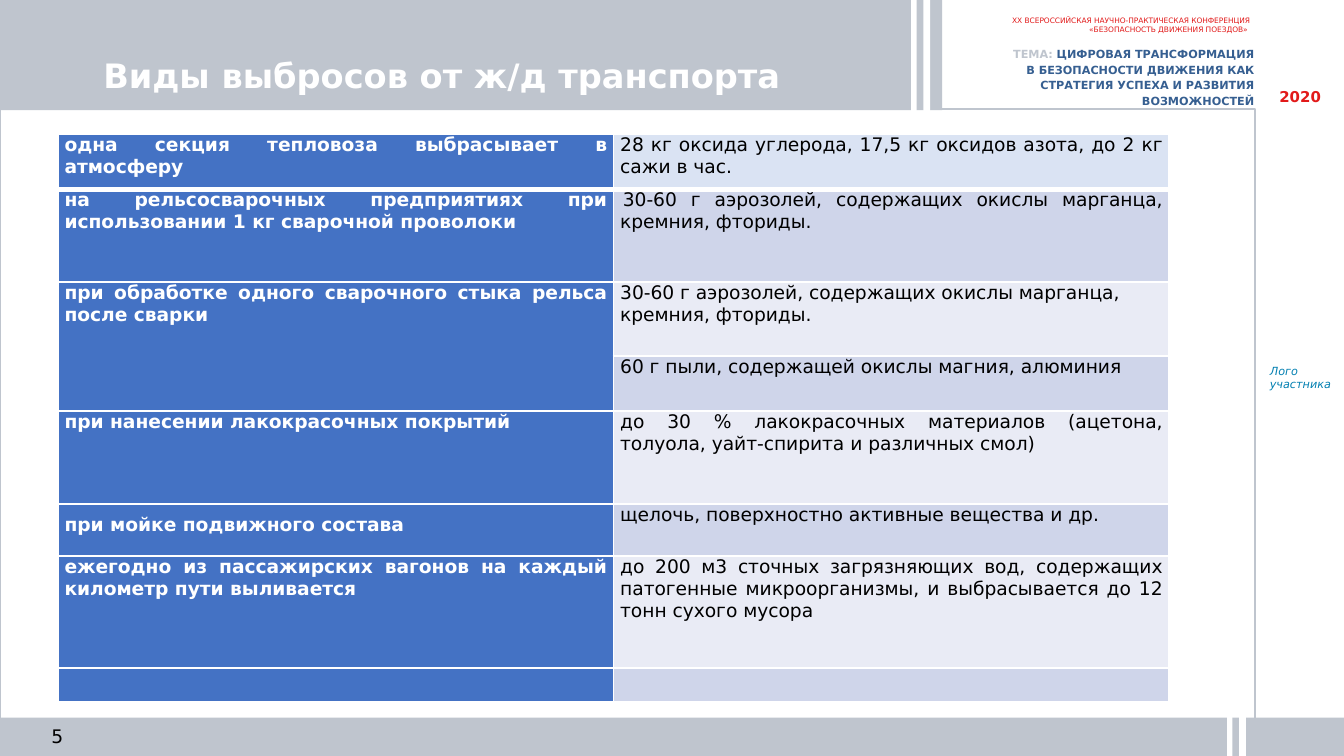
from lxml import etree
from pptx import Presentation
from pptx.dml.color import RGBColor
from pptx.enum.shapes import MSO_SHAPE
from pptx.enum.text import MSO_ANCHOR, PP_ALIGN
from pptx.oxml.ns import qn
from pptx.util import Inches, Pt

RECT = MSO_SHAPE.RECTANGLE
LEFT, RIGHT, JUSTIFY = PP_ALIGN.LEFT, PP_ALIGN.RIGHT, PP_ALIGN.JUSTIFY
TOP, MIDDLE, BOTTOM = MSO_ANCHOR.TOP, MSO_ANCHOR.MIDDLE, MSO_ANCHOR.BOTTOM
FONT = "DejaVu Sans"
COLORS = {
    "white": "FFFFFF", "black": "000000", "gray": "BFC5CE", "navy": "365F91",
    "red": "E21A1A", "teal": "007FB1", "source": "4472C4",
    "first": "DAE3F3", "dark_band": "CFD5EA", "light_band": "E9EBF5",
}

# Source of emissions, emissions; None continues the source above
EMISSIONS = [
    ("одна секция тепловоза выбрасывает в атмосферу",
     "28 кг оксида углерода, 17,5 кг оксидов азота, до 2 кг сажи в час."),
    ("на рельсосварочных предприятиях при использовании 1 кг сварочной проволоки",
     "30-60 г аэрозолей, содержащих окислы марганца, кремния, фториды."),
    ("при обработке одного сварочного стыка рельса после сварки",
     "30-60 г аэрозолей, содержащих окислы марганца, кремния, фториды."),
    (None, "60 г пыли, содержащей окислы магния, алюминия"),
    ("при нанесении лакокрасочных покрытий ",
     "до 30 % лакокрасочных материалов (ацетона, толуола, уайт-спирита "
     "и различных смол)"),
    ("при мойке подвижного состава",
     "щелочь, поверхностно активные вещества и др."),
    ("ежегодно из пассажирских вагонов на каждый километр пути выливается",
     "до 200 м3 сточных загрязняющих вод, содержащих патогенные "
     "микроорганизмы, и выбрасывается до 12 тонн сухого мусора"),
    ("", ""),
]
ROW_HEIGHTS = [0.41, 0.69, 0.55, 0.41, 0.69, 0.39, 0.83, 0.25]


def rgb(name):
    return RGBColor.from_string(COLORS[name])


def add_run(paragraph, text, size, color, bold=False, italic=False):
    run = paragraph.add_run()
    run.text = text
    font = run.font
    font.name, font.size, font.bold, font.italic = FONT, Pt(size), bold, italic
    font.color.rgb = rgb(color)


def add_bar(slide, x, y, w, h, fill=None):
    """A filled bar, or a thin gray outline when there is no fill."""
    bar = slide.shapes.add_shape(RECT, Inches(x), Inches(y), Inches(w), Inches(h))
    bar.shadow.inherit = False
    if fill:
        bar.fill.solid()
        bar.fill.fore_color.rgb = rgb(fill)
        bar.line.fill.background()
    else:
        bar.fill.background()
        bar.line.color.rgb = rgb("gray")
        bar.line.width = Pt(1)


def add_label(slide, x, y, w, h, align=LEFT, anchor=TOP, insets=(0.1, 0.05, 0.1, 0.05)):
    """An empty wrapped text box; returns its paragraph."""
    frame = slide.shapes.add_textbox(
        Inches(x), Inches(y), Inches(w), Inches(h)).text_frame
    frame.word_wrap = True
    frame.vertical_anchor = anchor
    (frame.margin_left, frame.margin_top,
     frame.margin_right, frame.margin_bottom) = map(Inches, insets)
    paragraph = frame.paragraphs[0]
    paragraph.alignment = align
    return paragraph


def add_stripes(slide, x, y, h):
    """A pair of white stripes across a gray band."""
    add_bar(slide, x + 0.09, y, 0.05, h, "white")
    add_bar(slide, x, y, 0.04, h, "white")


def add_header(slide, x, y, w, h):
    add_bar(slide, x, y, w, h, "gray")
    add_stripes(slide, x + w - 0.23, y - 0.01, h + 0.02)
    title = add_label(slide, x + 0.67, y + 0.06, 5.51, 0.7, anchor=BOTTOM)
    add_run(title, "Виды выбросов от ж/д транспорта", 18, "white", bold=True)


def add_conference(slide, x, y):
    conference = add_label(slide, x, y + 0.07, 2.38, 0.24, RIGHT)
    add_run(conference, "XX ВСЕРОССИЙСКАЯ НАУЧНО-ПРАКТИЧЕСКАЯ КОНФЕРЕНЦИЯ "
            "«БЕЗОПАСНОСТЬ ДВИЖЕНИЯ ПОЕЗДОВ» ", 4, "red")
    topic = add_label(slide, x - 0.05, y + 0.29, 2.46, 0.44, RIGHT)
    topic.line_spacing = 1.15
    add_run(topic, "ТЕМА: ", 6, "gray", bold=True)
    add_run(topic, "ЦИФРОВАЯ ТРАНСФОРМАЦИЯ", 6, "navy", bold=True)
    topic.add_line_break()
    add_run(topic, "В БЕЗОПАСНОСТИ ДВИЖЕНИЯ КАК СТРАТЕГИЯ УСПЕХА И РАЗВИТИЯ "
            "ВОЗМОЖНОСТЕЙ", 6, "navy", bold=True)
    year = add_label(slide, x + 2.4, y + 0.6, 0.69, 0.24)
    add_run(year, "2020", 8, "red", bold=True)


def add_side_note(slide, x, y, w, h):
    note = add_label(slide, x, y, w, h, insets=(0.1, 0.05, 0, 0.05))
    add_run(note, "Лого участника", 6, "teal", italic=True)


def add_footer(slide, x, y, w, h):
    add_bar(slide, x, y, w, h, "gray")
    add_stripes(slide, x + 9.13, y - 0.04, h + 0.06)
    number = add_label(slide, x + 0.22, y + 0.05, 0.25, 0.17, RIGHT, MIDDLE, (0, 0, 0, 0))
    add_run(number, "5", 10, "black")


def set_borders(cell, bottom):
    """White borders; they precede the fill, so set them first."""
    properties = cell._tc.get_or_add_tcPr()
    for side, width in (("L", 1), ("R", 1), ("T", 1), ("B", bottom)):
        line = etree.SubElement(properties, qn(f"a:ln{side}"), w=str(Pt(width)))
        fill = etree.SubElement(line, qn("a:solidFill"))
        etree.SubElement(fill, qn("a:srgbClr"), val=COLORS["white"])


def fill_cell(cell, text, fill, color, bold, bottom):
    set_borders(cell, bottom)
    cell.fill.solid()
    cell.fill.fore_color.rgb = rgb(fill)
    cell.margin_left = cell.margin_right = Inches(0.05)
    cell.margin_top = cell.margin_bottom = 0
    paragraph = cell.text_frame.paragraphs[0]
    paragraph.alignment = JUSTIFY
    if text:
        add_run(paragraph, text, 10, color, bold)
    else:
        # Keeps the empty row low
        etree.SubElement(paragraph._p, qn("a:endParaRPr"), sz="1000")


def add_emissions_table(slide, x, y, w):
    table = slide.shapes.add_table(
        len(EMISSIONS), 2, Inches(x), Inches(y), Inches(w),
        Inches(sum(ROW_HEIGHTS))).table
    table.horz_banding = False
    for column in table.columns:
        column.width = Inches(w / 2)
    for i, (source, emission) in enumerate(EMISSIONS):
        table.rows[i].height = Inches(ROW_HEIGHTS[i])
        band = "first" if i == 0 else "dark_band" if i % 2 else "light_band"
        bottom = 3 if i == 0 else 1
        fill_cell(table.cell(i, 0), source, "source", "white", True, bottom)
        fill_cell(table.cell(i, 1), emission, band, "black", False, bottom)
        if source is None:
            table.cell(i - 1, 0).merge(table.cell(i, 0))
    # Paragraph exceptions: indent, ragged right, wide line spacing
    welding, joint, washing = (table.cell(r, c).text_frame.paragraphs[0]
                               for r, c in ((1, 1), (2, 1), (5, 0)))
    welding._p.get_or_add_pPr().set("indent", str(Inches(0.02)))
    joint.alignment = LEFT
    washing.line_spacing = 1.5


def main():
    prs = Presentation()
    prs.slide_width = Inches(10)
    prs.slide_height = prs.slide_width * 9 // 16
    slide = prs.slides.add_slide(prs.slide_layouts[6])
    add_bar(slide, 0, 0.81, 9.34, 4.8)  # content frame
    add_header(slide, 0, 0, 7.01, 0.82)
    add_footer(slide, 0, 5.34, 10, 0.29)
    add_conference(slide, 7.02, 0)
    add_side_note(slide, 9.35, 2.66, 0.65, 0.3)
    add_emissions_table(slide, 0.43, 1, 8.27)
    prs.save("out.pptx")


if __name__ == "__main__":
    main()
